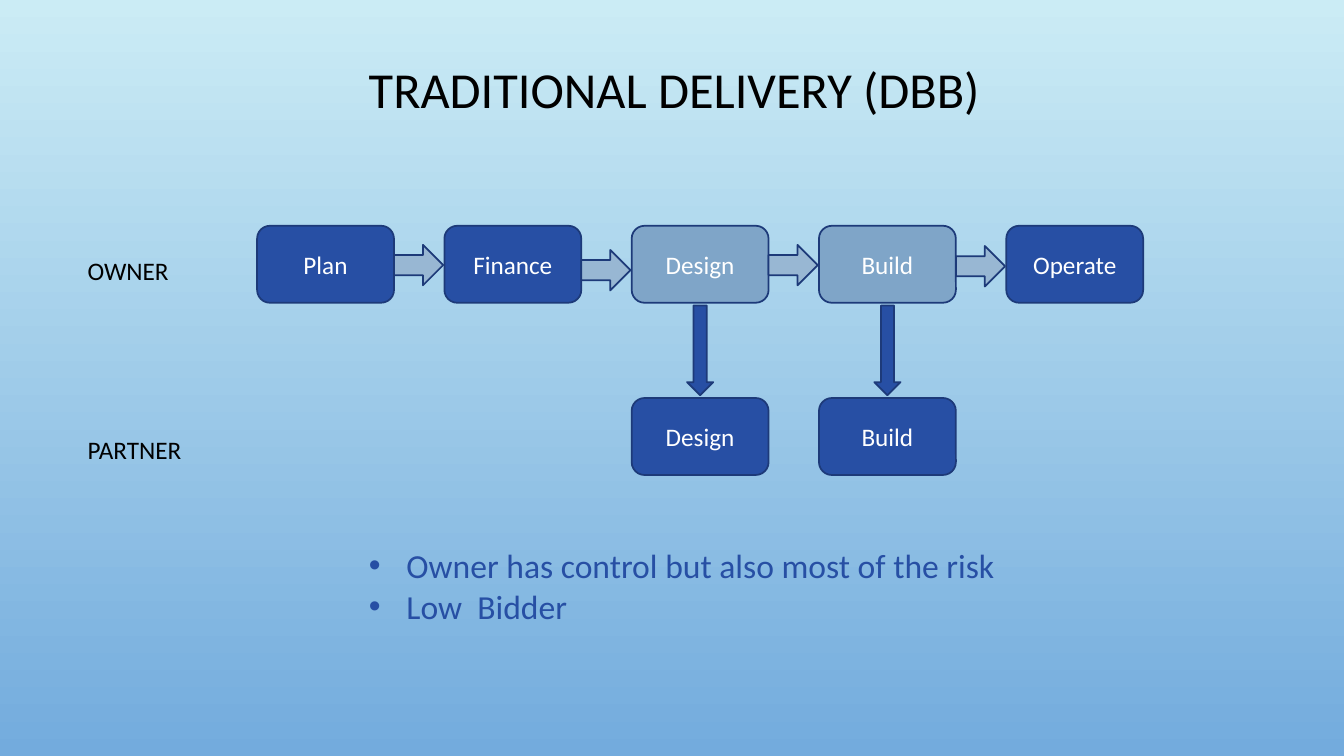
"""Build the slide on traditional design-bid-build delivery."""
import lxml.etree
import pptx
import pptx.dml.color
import pptx.enum.shapes
import pptx.enum.text
import pptx.oxml.ns
import pptx.util

Cm = pptx.util.Cm
Pt = pptx.util.Pt
RGB = pptx.dml.color.RGBColor.from_string
MSO_SHAPE = pptx.enum.shapes.MSO_SHAPE
ALIGN = pptx.enum.text.PP_ALIGN
ANCHOR = pptx.enum.text.MSO_ANCHOR

THEME = {
    "font": "Calibri",
    "title": Pt(36), "list": Pt(24), "label": Pt(18), "outline": Pt(1.25),
    "sky": RGB("CBECF5"), "sea": RGB("73ABDD"),
    "navy": RGB("274FA4"), "edge": RGB("1D3A79"),
    "steel": RGB("7FA5C8"), "mist": RGB("98B7D3"),
    "black": RGB("000000"), "white": RGB("FFFFFF"),
}


def write(holder, lines, size, color, frame_format, paragraph_format):
    frame = holder.text_frame
    frame.text = "\n".join(lines)
    for name, value in frame_format.items():
        setattr(frame, name, value)
    for paragraph in frame.paragraphs:
        for name, value in paragraph_format.items():
            setattr(paragraph, name, value)
        for run in paragraph.runs:
            for name, value in {"name": THEME["font"], "size": THEME[size]}.items():
                setattr(run.font, name, value)
            run.font.color.rgb = THEME[color]


def draw(kind, left, top, width, height, fill):
    shape = slide.shapes.add_shape(kind, Cm(left), Cm(top), Cm(width), Cm(height))
    shape.shadow.inherit = False
    shape.fill.solid()
    shape.fill.fore_color.rgb = THEME[fill]
    shape.line.color.rgb = THEME["edge"]
    shape.line.width = THEME["outline"]
    return shape


deck = pptx.Presentation()
deck.slide_width, deck.slide_height = Cm(33.87), Cm(19.05)
slide = deck.slides.add_slide(deck.slide_layouts[1])

backdrop = slide.background.fill
backdrop.gradient()
backdrop.gradient_angle = 270
for stop, tone in zip(backdrop.gradient_stops, ("sky", "sea")):
    stop.color.rgb = THEME[tone]

heading, remarks = slide.placeholders
placements = ((heading, (2.39, 0.48, 29.21, 3.68)), (remarks, (9.04, 13.61, 16.41, 2.31)))
for holder, place in placements:
    for side, length in zip(("left", "top", "width", "height"), place):
        setattr(holder, side, Cm(length))

NO_FIT = {"auto_size": pptx.enum.text.MSO_AUTO_SIZE.NONE, "word_wrap": True}
MIDDLE = {"vertical_anchor": ANCHOR.MIDDLE, "word_wrap": True}
CENTERED = {"alignment": ALIGN.CENTER}

write(heading, ["TRADITIONAL DELIVERY (DBB)"], "title", "black",
      {**NO_FIT, **MIDDLE}, {**CENTERED, "line_spacing": 0.9})

BOX_WIDTH, BOX_HEIGHT = 3.45, 1.94
FIRST_LEFT, PITCH = 6.48, 4.72
OWNER_TOP, PARTNER_TOP = 5.69, 10.03
HANDOVER_WIDTH = 0.66
next_step_tops = (6.17, 6.3, 6.17, 6.2)
steps = ("Plan", "Finance", "Design", "Build", "Operate")
delegated = ("Design", "Build")

for index, step in enumerate(steps):
    left = FIRST_LEFT + index * PITCH
    rows = [(OWNER_TOP, "steel" if step in delegated else "navy")]
    if step in delegated:
        rows.append((PARTNER_TOP, "navy"))
        draw(MSO_SHAPE.DOWN_ARROW, left + (BOX_WIDTH - HANDOVER_WIDTH) / 2, 7.7,
             HANDOVER_WIDTH, 2.26, "navy")
    for top, fill in rows:
        box = draw(MSO_SHAPE.ROUNDED_RECTANGLE, left, top, BOX_WIDTH, BOX_HEIGHT, fill)
        write(box, [step], "label", "white", MIDDLE, CENTERED)
    if index < len(next_step_tops):
        draw(MSO_SHAPE.RIGHT_ARROW, left + BOX_WIDTH, next_step_tops[index],
             1.24, 1.02, "mist")

for party, top, width in (("OWNER", 6.3, 2.57), ("PARTNER", 10.82, 2.9)):
    label = slide.shapes.add_textbox(Cm(1.96), Cm(top), Cm(width), Cm(1.02))
    write(label, [party], "label", "black", {"word_wrap": False}, {"alignment": ALIGN.LEFT})

write(remarks, ["Owner has control but also most of the risk", "Low  Bidder"],
      "list", "navy", {**NO_FIT, "vertical_anchor": ANCHOR.TOP},
      {"space_before": Pt(0), "line_spacing": 1.0})
for remark in remarks.text_frame.paragraphs:
    properties = remark._p.get_or_add_pPr()
    properties.set("marL", str(Cm(0.95)))
    properties.set("indent", str(-Cm(0.95)))
    for tag, key, value in (("a:buFont", "typeface", "Arial"), ("a:buChar", "char", "•")):
        lxml.etree.SubElement(properties, pptx.oxml.ns.qn(tag)).set(key, value)

deck.save("out.pptx")
